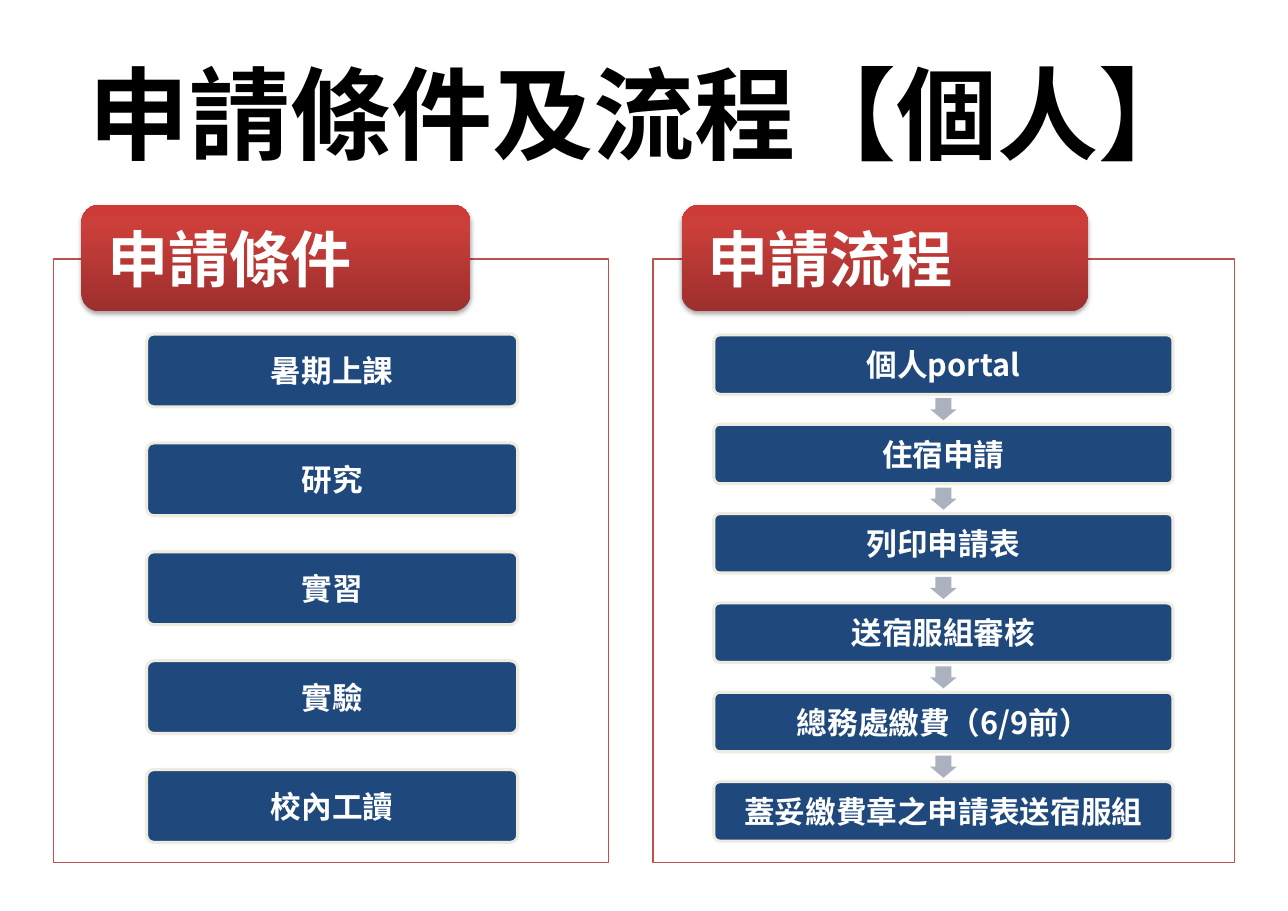
from lxml import etree
from pptx import Presentation
from pptx.dml.color import RGBColor
from pptx.enum import shapes, text
from pptx.oxml import ns, parse_xml
from pptx.util import Cm, Pt

FONT = "Noto Sans CJK SC"
BLACK = RGBColor(0x00, 0x00, 0x00)
WHITE = RGBColor(0xFF, 0xFF, 0xFF)
RED = RGBColor(0xC0, 0x50, 0x4D)
NAVY = RGBColor(0x1F, 0x49, 0x7D)
CREAM = RGBColor(0xEE, 0xEC, 0xE1)
GREY = RGBColor(0xAC, 0xB1, 0xBF)
RED_STOPS = [
    (0, RGBColor(0x9C, 0x2F, 0x2D)),
    (80, RGBColor(0xCB, 0x3E, 0x3A)),
    (100, RGBColor(0xCE, 0x3B, 0x37)),
]

PANEL_TOP, PANEL_H = 5.97, 13.92
HEADER_TOP, HEADER_H = 4.72, 2.46
ARROW_W, ARROW_H = 0.61, 0.51

CONDITIONS = ["暑期上課", "研究", "實習", "實驗", "校內工讀"]
STEPS = ["個人portal", "住宿申請", "列印申請表", "送宿服組審核",
         "總務處繳費（6/9前）", "蓋妥繳費章之申請表送宿服組"]


def write(tf, words, size, color, align, inset):
    """Fill a text frame with one bold, vertically centred line."""
    tf.word_wrap = True
    tf.auto_size = text.MSO_AUTO_SIZE.NONE
    tf.vertical_anchor = text.MSO_ANCHOR.MIDDLE
    tf.margin_left = tf.margin_right = Cm(inset)
    tf.margin_top = tf.margin_bottom = Cm(0.15)
    p = tf.paragraphs[0]
    p.alignment = align
    r = p.add_run()
    r.text = words
    r.font.name = FONT
    r.font.size = Pt(size)
    r.font.bold = True
    r.font.color.rgb = color
    ea = etree.SubElement(r.font._element, ns.qn("a:ea"))
    ea.set("typeface", FONT)


def add_block(s, kind, x, y, w, h, fill, line=None, line_width=0):
    sp = s.shapes.add_shape(kind, Cm(x), Cm(y), Cm(w), Cm(h))
    sp.shadow.inherit = False
    sp.fill.solid()
    sp.fill.fore_color.rgb = fill
    if line is None:
        sp.line.fill.background()
    else:
        sp.line.color.rgb = line
        sp.line.width = Pt(line_width)
    return sp


def add_panel(s, x, w):
    sp = add_block(s, shapes.MSO_SHAPE.RECTANGLE, x, PANEL_TOP, w, PANEL_H,
                   WHITE, RED, 0.75)
    color = sp._element.spPr.find(ns.qn("a:solidFill"))[0]
    etree.SubElement(color, ns.qn("a:alpha")).set("val", "90000")


def add_header(s, words, x, w):
    sp = add_block(s, shapes.MSO_SHAPE.ROUNDED_RECTANGLE, x, HEADER_TOP, w,
                   HEADER_H, RED)
    # Three-stop gradient, dark at the bottom
    sp.fill.gradient()
    sp.fill.gradient_angle = 90
    stops = sp._element.spPr.find(".//" + ns.qn("a:gsLst"))
    for stop in list(stops):
        stops.remove(stop)
    for pos, color in RED_STOPS:
        gs = etree.SubElement(stops, ns.qn("a:gs"), pos=str(pos * 1000))
        etree.SubElement(gs, ns.qn("a:srgbClr"), val=str(color))
    # Soft shadow below
    effects = sp._element.spPr.find(ns.qn("a:effectLst"))
    effects.append(parse_xml(
        f'<a:outerShdw {ns.nsdecls("a")} blurRad="40000" dist="23000" '
        'dir="5400000" rotWithShape="0"><a:srgbClr val="000000">'
        '<a:alpha val="35000"/></a:srgbClr></a:outerShdw>'))
    write(sp.text_frame, words, 40, WHITE, text.PP_ALIGN.LEFT, 0.48)


def add_arrow(s, center, middle):
    sp = add_block(s, shapes.MSO_SHAPE.DOWN_ARROW, center - ARROW_W / 2,
                   middle - ARROW_H / 2, ARROW_W, ARROW_H, GREY)
    sp.adjustments[0] = 0.6
    sp.adjustments[1] = 0.5


def add_boxes(s, items, x, y, w, h, pitch, arrows=False):
    """Stack boxes at an equal pitch, with optional arrows in the gaps."""
    for i, words in enumerate(items):
        top = y + i * pitch
        sp = add_block(s, shapes.MSO_SHAPE.ROUNDED_RECTANGLE, x, top, w, h,
                       NAVY, CREAM, 2)
        sp.adjustments[0] = 0.1
        write(sp.text_frame, words, 20, WHITE, text.PP_ALIGN.CENTER, 0.24)
        if arrows and i < len(items) - 1:
            add_arrow(s, x + w / 2, top + (h + pitch) / 2)


def add_title(s, words):
    title = s.shapes.title
    title.left, title.top = Cm(1.48), Cm(0.84)
    title.width, title.height = Cm(26.75), Cm(3.51)
    write(title.text_frame, words, 66, BLACK, text.PP_ALIGN.CENTER, 0.28)


def main():
    prs = Presentation()
    prs.slide_width, prs.slide_height = Cm(29.7), Cm(21)
    s = prs.slides.add_slide(prs.slide_layouts[5])
    add_title(s, "申請條件及流程【個人】")

    # Conditions on the left
    add_panel(s, 1.24, 12.8)
    add_header(s, "申請條件", 1.88, 8.97)
    add_boxes(s, CONDITIONS, 3.38, 7.7, 8.56, 1.68, 2.51)

    # Process on the right
    add_panel(s, 15.06, 13.41)
    add_header(s, "申請流程", 15.72, 9.37)
    add_boxes(s, STEPS, 16.46, 7.72, 10.59, 1.37, 2.06, arrows=True)

    prs.save("out.pptx")


if __name__ == "__main__":
    main()
